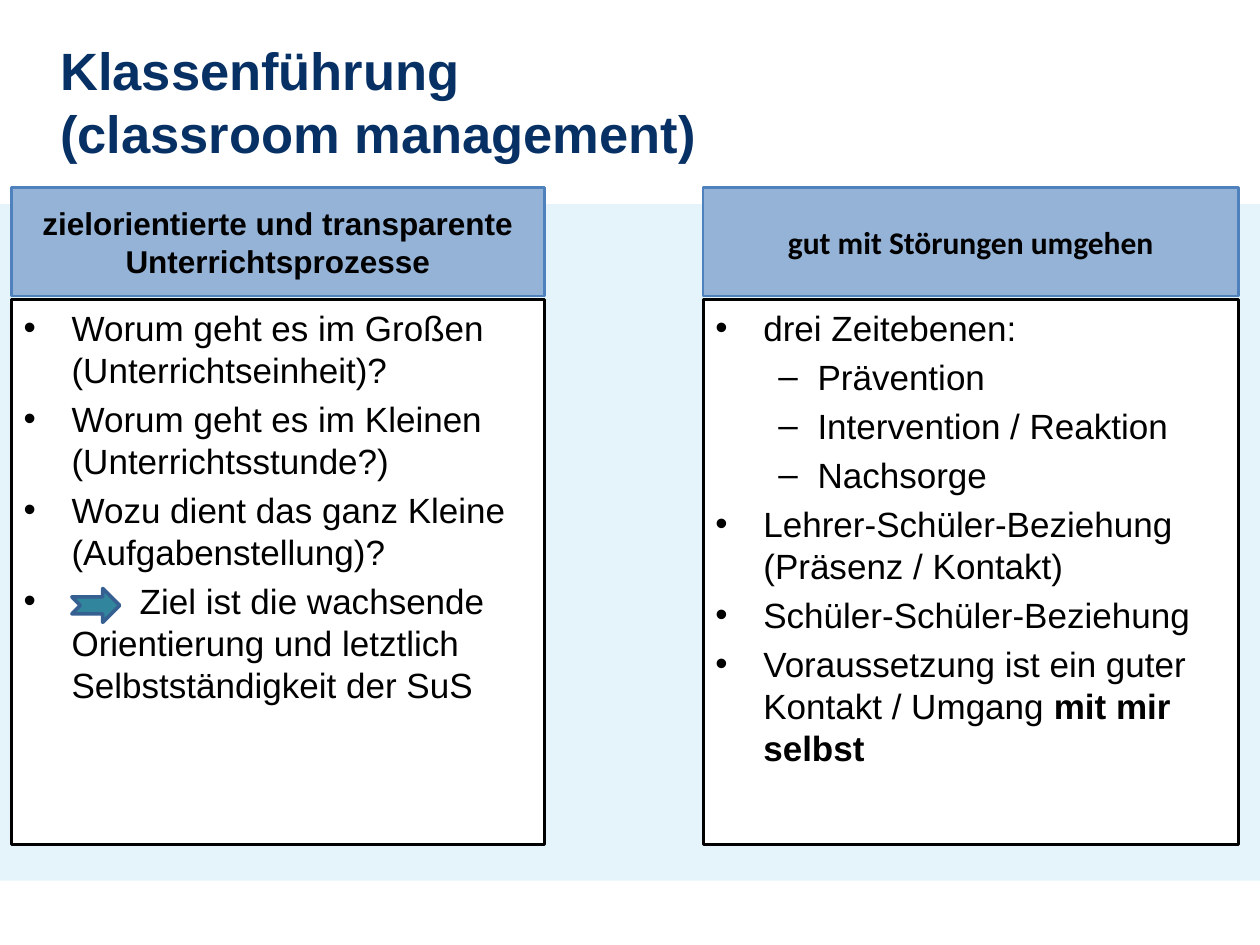
from lxml import etree
from pptx import Presentation
from pptx.dml.color import RGBColor
from pptx.enum.shapes import MSO_SHAPE
from pptx.enum.text import MSO_ANCHOR, PP_ALIGN
from pptx.oxml.ns import qn
from pptx.util import Inches, Pt

NAVY = RGBColor(0x07, 0x30, 0x64)
PALE = RGBColor(0xE5, 0xF3, 0xFA)
HEADER = RGBColor(0x95, 0xB3, 0xD7)
HEADER_LINE = RGBColor(0x4F, 0x81, 0xBD)
TEAL = RGBColor(0x31, 0x85, 0x9C)
ARROW_LINE = RGBColor(0x37, 0x60, 0x92)
BLACK = RGBColor(0, 0, 0)
WHITE = RGBColor(0xFF, 0xFF, 0xFF)

TITLE = "Klassenführung\v(classroom management)"
# Each item: level, then (text, bold) runs; a leading tab leaves room for the arrow.
COLUMNS = [
    dict(left=0.09, width=4.23, font="Arial",
         header="zielorientierte und transparente Unterrichtsprozesse",
         items=[
             (0, [("Worum geht es im Großen (Unterrichtseinheit)?", False)]),
             (0, [("Worum geht es im Kleinen (Unterrichtsstunde?)", False)]),
             (0, [("Wozu dient das ganz Kleine (Aufgabenstellung)?", False)]),
             (0, [("\tZiel ist die wachsende Orientierung und letztlich "
                   "Selbstständigkeit der SuS", False)]),
         ]),
    dict(left=5.58, width=4.25, font="Calibri",
         header="gut mit Störungen umgehen",
         items=[
             (0, [("drei Zeitebenen:", False)]),
             (1, [("Prävention", False)]),
             (1, [("Intervention / Reaktion", False)]),
             (1, [("Nachsorge", False)]),
             (0, [("Lehrer-Schüler-Beziehung (Präsenz / Kontakt)", False)]),
             (0, [("Schüler-Schüler-Beziehung", False)]),
             (0, [("Voraussetzung ist ein guter Kontakt / Umgang ", False),
                  ("mit mir selbst", True)]),
         ]),
]
BULLETS = [("•", 0.38, 0.38), ("–", 0.81, 0.31)]  # mark, margin, hanging
TAB_STOP = 0.92


def add_box(slide, kind, left, top, width, height, fill, line=None, weight=0):
    s = slide.shapes.add_shape(kind, Inches(left), Inches(top),
                               Inches(width), Inches(height))
    s.shadow.inherit = False
    s.fill.solid()
    s.fill.fore_color.rgb = fill
    if line is None:
        s.line.fill.background()
    else:
        s.line.color.rgb = line
        s.line.width = Pt(weight)
    return s


def style(font, name, size, color, bold):
    font.name = name
    font.size = Pt(size)
    font.color.rgb = color
    font.bold = bold


def set_bullet(p, level):
    mark, margin, hanging = BULLETS[level]
    p.level = level
    pPr = p._p.get_or_add_pPr()
    pPr.set("marL", str(Inches(margin)))
    pPr.set("indent", str(-Inches(hanging)))
    etree.SubElement(pPr, qn("a:buFont"), typeface="Arial")
    etree.SubElement(pPr, qn("a:buChar"), char=mark)


def set_tab(p, position):
    tabs = etree.SubElement(p._p.get_or_add_pPr(), qn("a:tabLst"))
    etree.SubElement(tabs, qn("a:tab"), pos=str(Inches(position)), algn="l")


def add_column(slide, left, width, font, header, items):
    body = add_box(slide, MSO_SHAPE.RECTANGLE, left, 2.38, width, 4.32,
                   WHITE, BLACK, 1.75)
    tf = body.text_frame
    tf.word_wrap = True
    tf.vertical_anchor = MSO_ANCHOR.TOP
    for i, (level, runs) in enumerate(items):
        p = tf.add_paragraph() if i else tf.paragraphs[0]
        p.alignment = PP_ALIGN.LEFT
        if i:
            p.space_before = Pt(4)
        set_bullet(p, level)
        if runs[0][0].startswith("\t"):
            set_tab(p, TAB_STOP)
        for text, bold in runs:
            r = p.add_run()
            r.text = text
            style(r.font, "Arial", 20, BLACK, bold)

    head = add_box(slide, MSO_SHAPE.RECTANGLE, left, 1.49, width, 0.86,
                   HEADER, HEADER_LINE, 1.5)
    tf = head.text_frame
    tf.word_wrap = True
    tf.vertical_anchor = MSO_ANCHOR.MIDDLE
    tf.text = header
    p = tf.paragraphs[0]
    p.alignment = PP_ALIGN.CENTER
    style(p.runs[0].font, font, 18, BLACK, True)


def main():
    prs = Presentation()
    prs.slide_width, prs.slide_height = Inches(10), Inches(7.5)
    slide = prs.slides.add_slide(prs.slide_layouts[6])

    add_box(slide, MSO_SHAPE.RECTANGLE, 0, 1.62, 10, 5.37, PALE)

    title = slide.shapes.add_textbox(Inches(0.38), Inches(0.37),
                                     Inches(8.17), Inches(0.86))
    tf = title.text_frame
    tf.word_wrap = True
    tf.vertical_anchor = MSO_ANCHOR.MIDDLE
    tf.text = TITLE
    for r in tf.paragraphs[0].runs:
        style(r.font, "Arial", 30, NAVY, True)

    for column in COLUMNS:
        add_column(slide, **column)
    add_box(slide, MSO_SHAPE.NOTCHED_RIGHT_ARROW, 0.57, 4.67, 0.38, 0.27,
            TEAL, ARROW_LINE, 2)

    prs.save("out.pptx")


if __name__ == "__main__":
    main()
